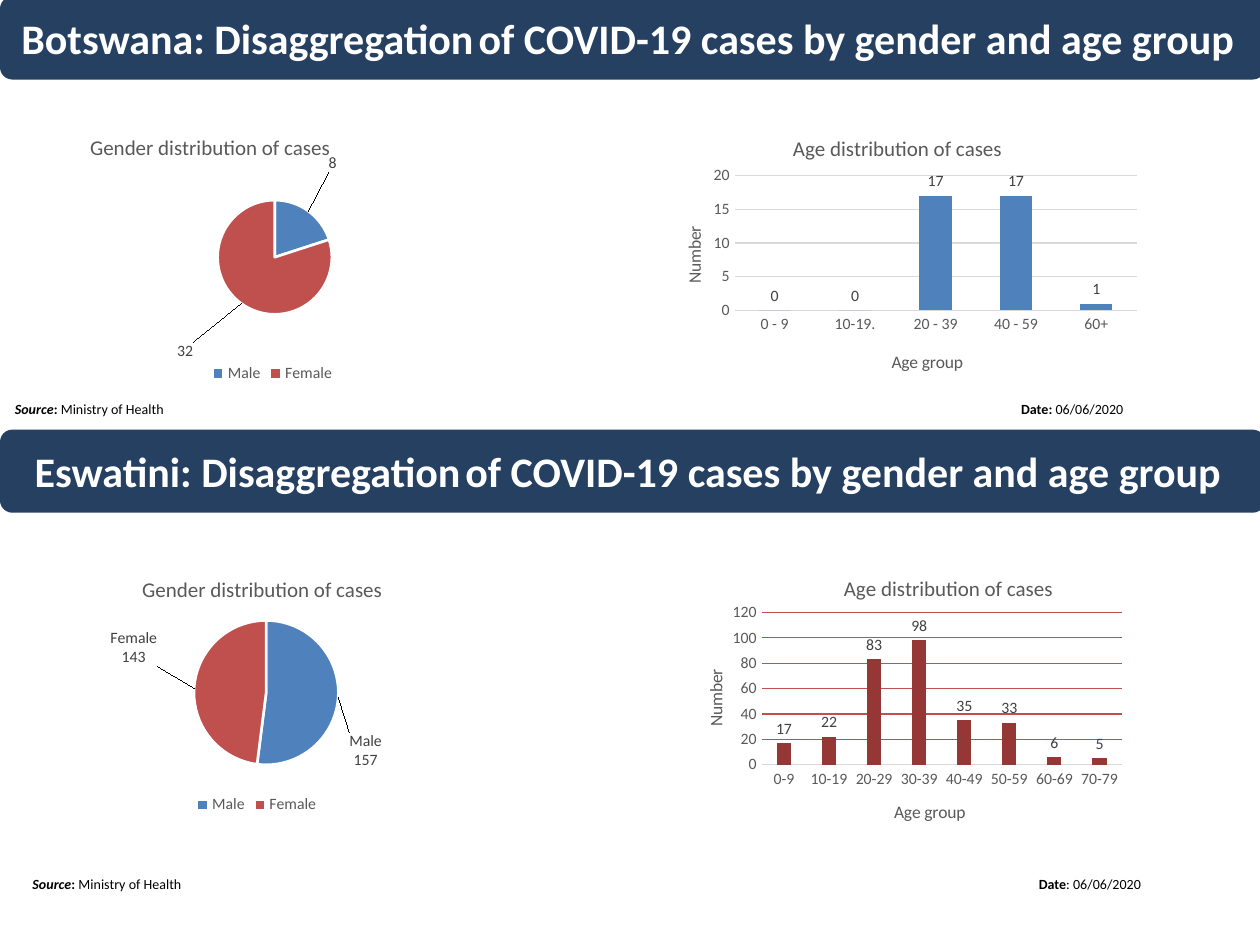
from dataclasses import dataclass
from typing import Any

from lxml.etree import SubElement
from pptx import Presentation
from pptx.chart.chart import Chart
from pptx.chart.data import CategoryChartData
from pptx.dml.color import RGBColor
from pptx.enum.chart import XL_CHART_TYPE, XL_LABEL_POSITION, XL_LEGEND_POSITION, XL_TICK_MARK
from pptx.enum.shapes import MSO_SHAPE
from pptx.enum.text import MSO_ANCHOR, PP_ALIGN
from pptx.oxml.ns import qn
from pptx.slide import Slide
from pptx.util import Pt

NAVY = RGBColor(0x25, 0x40, 0x61)
WHITE = RGBColor(0xFF, 0xFF, 0xFF)
BLACK = RGBColor(0, 0, 0)
GRAY = RGBColor(0x59, 0x59, 0x59)
DARK_GRAY = RGBColor(0x40, 0x40, 0x40)
LIGHT_GRAY = RGBColor(0xD9, 0xD9, 0xD9)
BLUE = RGBColor(0x4F, 0x81, 0xBD)
RED = RGBColor(0xC0, 0x50, 0x4D)
MAROON = RGBColor(0x95, 0x37, 0x35)

DATE_TAB = Pt(575)
BOX_FORMAT = {"word_wrap": True, "vertical_anchor": MSO_ANCHOR.MIDDLE}
LEGEND_FORMAT = {"position": XL_LEGEND_POSITION.BOTTOM, "include_in_layout": False}
AXIS_FORMAT = {"major_tick_mark": XL_TICK_MARK.NONE, "minor_tick_mark": XL_TICK_MARK.NONE}
LABEL_FORMAT = {"show_value": True, "position": XL_LABEL_POSITION.OUTSIDE_END}


@dataclass
class PointLabel:
    offset: tuple[float, float]
    lines: tuple[str, ...] = ()


@dataclass
class Pie:
    frame: tuple[float, ...]
    title_place: tuple[float, float]
    plot_place: tuple[float, ...]
    values: tuple[int, int]
    labels: tuple[PointLabel, PointLabel]


@dataclass
class Columns:
    frame: tuple[float, ...]
    title_place: tuple[float, float]
    plot_place: tuple[float, ...]
    age_title_place: tuple[float, float]
    number_title_place: tuple[float, float]
    cases: dict[str, int]
    maximum: int
    unit: int
    color: RGBColor
    grid_color: RGBColor
    gap: int
    overlap: int
    has_base_line: bool


@dataclass
class Country:
    name: str
    banner_top: float
    footer: tuple[float, float, float]
    date_parts: tuple[str, str]
    pie: Pie
    columns: Columns


COUNTRIES = (
    Country(
        "Botswana", -2, (1.4, 225.4, 705), ("Date:", " 06/06/2020"),
        Pie((42.5, 66.2, 226.8, 155.5), (0.03, 0.05), (0.36, 0.31, 0.29, 0.42), (8, 32),
            (PointLabel((0.04, -0.12)), PointLabel((-0.11, 0.12)))),
        Columns((371.5, 63.4, 283.7, 160.6), (0.28, 0.07), (0.17, 0.23, 0.81, 0.48),
                (0.48, 0.84), (0.06, 0.4),
                {"0 - 9": 0, "10-19.": 0, "20 - 39": 17, "40 - 59": 17, "60+": 1},
                20, 5, BLUE, LIGHT_GRAY, 150, 0, False),
    ),
    Country(
        "Eswatini", 245.5, (11.5, 496.8, 695), ("Date", ": 06/06/2020"),
        Pie((41, 316.1, 211.7, 151.9), (0.18, 0.07), (0.33, 0.25, 0.39, 0.55), (52, 48),
            (PointLabel((0.01, 0.2), ("Male", "157")),
             PointLabel((-0.08, -0.15), ("Female", "143")))),
        Columns((382.3, 312.5, 264.2, 170.6), (0.37, 0.08), (0.2, 0.22, 0.78, 0.51),
                (0.48, 0.84), (0.07, 0.4),
                {"0-9": 17, "10-19": 22, "20-29": 83, "30-39": 98,
                 "40-49": 35, "50-59": 33, "60-69": 6, "70-79": 5},
                120, 20, MAROON, RED, 219, -27, True),
    ),
)


def apply_format(target: Any, formats: dict[str, Any]) -> None:
    for name, value in formats.items():
        setattr(target, name, value)


def style_font(font: Any, size: float, color: RGBColor, **formats: Any) -> None:
    apply_format(font, {"name": "Calibri", "size": Pt(size), "bold": False} | formats)
    font.color.rgb = color


def add_run(paragraph: Any, text: str, size: float, color: RGBColor, **formats: Any) -> None:
    run = paragraph.add_run()
    run.text = text
    style_font(run.font, size, color, **formats)


def place(element: Any, index: int, values: tuple[float, ...], modes: dict[str, str]) -> None:
    for layout in element.findall(qn("c:layout")):
        element.remove(layout)
    layout = SubElement(element, qn("c:layout"))
    element.insert(index, layout)
    manual = SubElement(layout, qn("c:manualLayout"))
    settings = modes | {key: str(value) for key, value in zip("xywh", values)}
    for name, value in settings.items():
        SubElement(manual, qn(f"c:{name}")).set("val", value)


def set_title(title: Any, text: str, size: float, position: tuple[float, float]) -> None:
    add_run(title.text_frame.paragraphs[0], text, size, GRAY)
    place(title._element, 1, position, {"xMode": "edge", "yMode": "edge"})


def add_chart(slide: Slide, kind: Any, model: Pie | Columns, cases: dict[str, int], title: str) -> Chart:
    chart_data = CategoryChartData()
    chart_data.categories = list(cases)
    chart_data.add_series("Series 1", list(cases.values()))
    chart = slide.shapes.add_chart(kind, *map(Pt, model.frame), chart_data).chart
    style_font(chart.font, 10, BLACK)
    set_title(chart.chart_title, title, 12, model.title_place)
    plot_area = chart._chartSpace.find(".//" + qn("c:plotArea"))
    place(plot_area, 0, model.plot_place, {"layoutTarget": "inner", "xMode": "edge", "yMode": "edge"})
    labels = chart.plots[0].series[0].data_labels
    apply_format(labels, LABEL_FORMAT)
    style_font(labels.font, 9, DARK_GRAY)
    return chart


def add_pie(slide: Slide, pie: Pie) -> None:
    cases = dict(zip(("Male", "Female"), pie.values))
    chart = add_chart(slide, XL_CHART_TYPE.PIE, pie, cases, "Gender distribution of cases")
    chart.plots[0].vary_by_categories = True
    chart.has_legend = True
    apply_format(chart.legend, LEGEND_FORMAT)
    style_font(chart.legend.font, 9, GRAY)
    series = chart.plots[0].series[0]
    for index, (label, color) in enumerate(zip(pie.labels, (BLUE, RED))):
        point = series.points[index]
        point.format.fill.solid()
        point.format.fill.fore_color.rgb = color
        point.format.line.color.rgb = WHITE
        point.format.line.width = Pt(1.5)
        if label.lines:
            text_frame = point.data_label.text_frame
            for number, line in enumerate(label.lines):
                paragraph = text_frame.add_paragraph() if number else text_frame.paragraphs[0]
                add_run(paragraph, line, 9, DARK_GRAY)
        else:
            style_font(point.data_label.font, 9, DARK_GRAY)
        point.data_label.position = XL_LABEL_POSITION.OUTSIDE_END
    for element, label in zip(list(series._element.iter(qn("c:dLbl"))), pie.labels):
        place(element, 1, label.offset, {})


def add_columns(slide: Slide, columns: Columns) -> None:
    chart = add_chart(slide, XL_CHART_TYPE.COLUMN_CLUSTERED, columns, columns.cases, "Age distribution of cases")
    chart.has_legend = False
    apply_format(chart.plots[0], {"gap_width": columns.gap, "overlap": columns.overlap,
                                  "vary_by_categories": False})
    fill = chart.plots[0].series[0].format.fill
    fill.solid()
    fill.fore_color.rgb = columns.color
    ages, numbers = chart.category_axis, chart.value_axis
    for axis, title, position in ((ages, "Age group", columns.age_title_place),
                                  (numbers, "Number", columns.number_title_place)):
        apply_format(axis, AXIS_FORMAT)
        style_font(axis.tick_labels.font, 9, GRAY)
        axis.format.line.fill.background()
        set_title(axis.axis_title, title, 10, position)
    if columns.has_base_line:
        ages.format.line.color.rgb = LIGHT_GRAY
        ages.format.line.width = Pt(0.75)
    apply_format(numbers, {"minimum_scale": 0, "maximum_scale": columns.maximum,
                           "major_unit": columns.unit, "has_major_gridlines": True})
    numbers.major_gridlines.format.line.color.rgb = columns.grid_color
    numbers.major_gridlines.format.line.width = Pt(0.75)


def add_banner(slide: Slide, country: Country) -> None:
    shape = slide.shapes.add_shape(MSO_SHAPE.ROUNDED_RECTANGLE, Pt(0), Pt(country.banner_top), Pt(723), Pt(47.5))
    shape.adjustments[0] = 0.15
    shape.shadow.inherit = False
    shape.fill.solid()
    shape.fill.fore_color.rgb = NAVY
    shape.line.fill.background()
    apply_format(shape.text_frame, BOX_FORMAT | {
        f"margin_{side}": Pt(7.2) for side in ("left", "top", "right", "bottom")})
    paragraph = shape.text_frame.paragraphs[0]
    paragraph.alignment = PP_ALIGN.CENTER
    add_run(paragraph, f"{country.name}: Disaggregation", 24, WHITE, bold=True)
    add_run(paragraph, " ", 10.5, BLACK, name="Noto Sans", bold=True)
    add_run(paragraph, "of COVID-19 cases by gender and age group ", 24, WHITE, bold=True)


def add_footer(slide: Slide, country: Country) -> None:
    left, top, width = country.footer
    box = slide.shapes.add_textbox(Pt(left), Pt(top), Pt(width), Pt(17.3))
    box.text_frame.word_wrap = True
    paragraph = box.text_frame.paragraphs[0]
    tabs = SubElement(paragraph._p.get_or_add_pPr(), qn("a:tabLst"))
    tab = SubElement(tabs, qn("a:tab"))
    tab.set("pos", str(DATE_TAB))
    tab.set("algn", "l")
    date_label, date = country.date_parts
    add_run(paragraph, "Source", 8, BLACK, bold=True, italic=True)
    add_run(paragraph, ":", 8, BLACK, bold=True)
    add_run(paragraph, " Ministry of Health\t", 8, BLACK)
    add_run(paragraph, date_label, 8, BLACK, bold=True)
    add_run(paragraph, date, 8, BLACK)


def main() -> None:
    presentation = Presentation()
    apply_format(presentation, {"slide_width": Pt(720), "slide_height": Pt(540)})
    slide = presentation.slides.add_slide(presentation.slide_layouts[6])
    for country in COUNTRIES:
        add_banner(slide, country)
        add_pie(slide, country.pie)
        add_columns(slide, country.columns)
        add_footer(slide, country)
    presentation.save("out.pptx")


if __name__ == "__main__":
    main()
